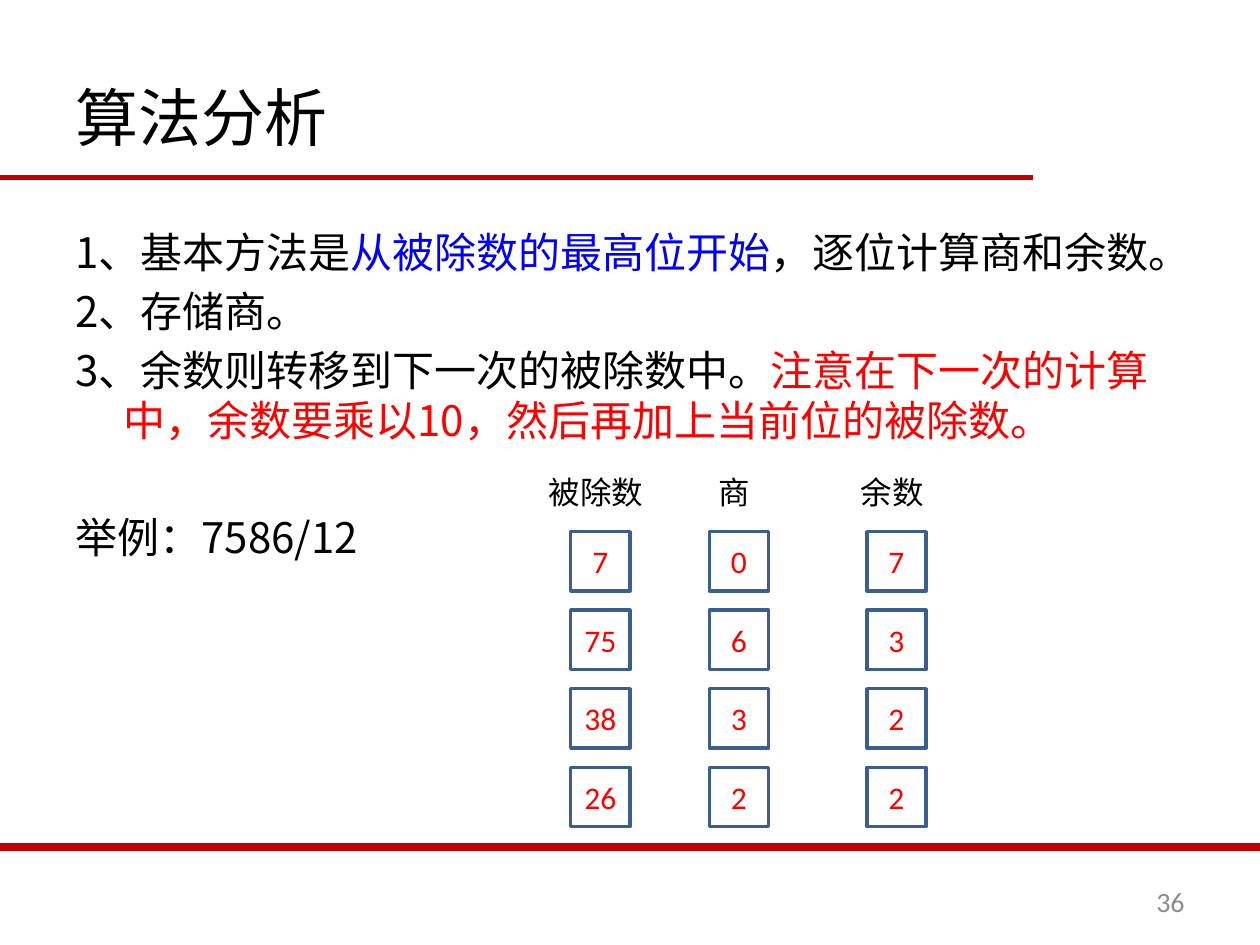
"""Build the slide that explains long division digit by digit."""
from dataclasses import dataclass

import lxml.etree
import pptx
import pptx.dml.color
import pptx.enum.shapes
import pptx.enum.text
import pptx.oxml.ns
import pptx.util
from pptx.util import Inches

BLACK = pptx.dml.color.RGBColor(0x00, 0x00, 0x00)
WHITE = pptx.dml.color.RGBColor(0xFF, 0xFF, 0xFF)
RED = pptx.dml.color.RGBColor(0xFF, 0x00, 0x00)
BLUE = pptx.dml.color.RGBColor(0x00, 0x00, 0xFF)
GREY = pptx.dml.color.RGBColor(0x8C, 0x8C, 0x8C)
RULE_RED = pptx.dml.color.RGBColor(0xC0, 0x00, 0x00)
BOX_BLUE = pptx.dml.color.RGBColor(0x3A, 0x5F, 0x8C)
HAN_FONT = "Noto Sans CJK SC"
DIGIT_FONT = "Calibri"

BOX_SIDE = 0.47
FIRST_ROW, LAST_ROW = 4.22, 6.09
LABEL_TOP, LABEL_WIDTH, LABEL_OVERHANG = 3.67, 1.02, 0.31


@dataclass(frozen=True)
class Span:
    text: str
    color: pptx.dml.color.RGBColor = BLACK


@dataclass(frozen=True)
class Step:
    spans: tuple[Span, ...]
    space_before: float = 4.8


@dataclass(frozen=True)
class Column:
    label: str
    left: float
    digits: tuple[str, ...]


@dataclass(frozen=True)
class Rule:
    length: float
    top: float
    weight: float


RULES = (Rule(8.2, 1.41, 3), Rule(10, 6.72, 4.5))
STEPS = (
    Step((Span("1、基本方法是"), Span("从被除数的最高位开始", BLUE), Span("，逐位计算商和余数。"))),
    Step((Span("2、存储商。"),)),
    Step((
        Span("3、余数则转移到下一次的被除数中。"),
        Span("注意在下一次的计算中，余数要乘以10，然后再加上当前位的被除数。", RED),
    )),
    Step((Span("举例：7586/12"),), space_before=38),
)
COLUMNS = (
    Column("被除数", 4.53, ("7", "75", "38", "26")),
    Column("商", 5.63, ("0", "6", "3", "2")),
    Column("余数", 6.88, ("7", "3", "2", "2")),
)


def add_run(paragraph, span: Span, size: float, font: str) -> None:
    run = paragraph.add_run()
    run.text = span.text
    run.font.size = pptx.util.Pt(size)
    run.font.name = font
    run.font.color.rgb = span.color
    east_asian = lxml.etree.SubElement(run.font._element, pptx.oxml.ns.qn("a:ea"))
    east_asian.set("typeface", HAN_FONT)


def place(shape, left: float, top: float, width: float, height: float) -> None:
    shape.left, shape.top = Inches(left), Inches(top)
    shape.width, shape.height = Inches(width), Inches(height)


def add_rule(slide, rule: Rule) -> None:
    line = slide.shapes.add_connector(
        pptx.enum.shapes.MSO_CONNECTOR.STRAIGHT,
        Inches(0), Inches(rule.top), Inches(rule.length), Inches(rule.top),
    )
    line.line.color.rgb = RULE_RED
    line.line.width = pptx.util.Pt(rule.weight)
    lxml.etree.SubElement(line._element.spPr, pptx.oxml.ns.qn("a:effectLst"))


def add_title(slide, text: str) -> None:
    title = slide.shapes.title
    place(title, 0.5, 0.3, 9, 1.25)
    title.text_frame.vertical_anchor = pptx.enum.text.MSO_ANCHOR.MIDDLE
    paragraph = title.text_frame.paragraphs[0]
    paragraph.alignment = pptx.enum.text.PP_ALIGN.LEFT
    add_run(paragraph, Span(text), 36, HAN_FONT)


def add_steps(slide, steps: tuple[Step, ...]) -> None:
    body = slide.placeholders[1]
    place(body, 0.5, 1.75, 9, 4.95)
    frame = body.text_frame
    frame.auto_size = pptx.enum.text.MSO_AUTO_SIZE.NONE
    for index, step in enumerate(steps):
        paragraph = frame.add_paragraph() if index else frame.paragraphs[0]
        paragraph.space_before = pptx.util.Pt(step.space_before)
        properties = paragraph._p.get_or_add_pPr()
        properties.set("marL", str(Inches(0.38)))
        properties.set("indent", str(Inches(-0.38)))
        lxml.etree.SubElement(properties, pptx.oxml.ns.qn("a:buNone"))
        for span in step.spans:
            add_run(paragraph, span, 24, HAN_FONT)


def add_cell(slide, left: float, top: float, width: float, span: Span, font: str):
    cell = slide.shapes.add_shape(
        pptx.enum.shapes.MSO_SHAPE.RECTANGLE,
        Inches(left), Inches(top), Inches(width), Inches(BOX_SIDE),
    )
    cell.shadow.inherit = False
    cell.fill.solid()
    cell.fill.fore_color.rgb = WHITE
    cell.line.fill.background()
    cell.text_frame.vertical_anchor = pptx.enum.text.MSO_ANCHOR.MIDDLE
    paragraph = cell.text_frame.paragraphs[0]
    paragraph.alignment = pptx.enum.text.PP_ALIGN.CENTER
    add_run(paragraph, span, 18, font)
    return cell


def add_column(slide, column: Column) -> None:
    add_cell(slide, column.left - LABEL_OVERHANG, LABEL_TOP, LABEL_WIDTH,
             Span(column.label), HAN_FONT)
    row_step = (LAST_ROW - FIRST_ROW) / (len(column.digits) - 1)
    for row, digit in enumerate(column.digits):
        box = add_cell(slide, column.left, FIRST_ROW + row * row_step, BOX_SIDE,
                       Span(digit, RED), DIGIT_FONT)
        box.line.color.rgb = BOX_BLUE
        box.line.width = pptx.util.Pt(2)


def add_page_number(slide, number: str) -> None:
    page = slide.shapes.add_textbox(Inches(7.17), Inches(6.95), Inches(2.33), Inches(0.4))
    page.text_frame.word_wrap = True
    page.text_frame.vertical_anchor = pptx.enum.text.MSO_ANCHOR.MIDDLE
    paragraph = page.text_frame.paragraphs[0]
    paragraph.alignment = pptx.enum.text.PP_ALIGN.RIGHT
    add_run(paragraph, Span(number, GREY), 16, DIGIT_FONT)


def main() -> None:
    presentation = pptx.Presentation()
    presentation.slide_width, presentation.slide_height = Inches(10), Inches(7.5)
    slide = presentation.slides.add_slide(presentation.slide_layouts[1])
    for rule in RULES:
        add_rule(slide, rule)
    add_title(slide, "算法分析")
    add_steps(slide, STEPS)
    add_page_number(slide, "36")
    for column in COLUMNS:
        add_column(slide, column)
    presentation.save("out.pptx")


if __name__ == "__main__":
    main()
